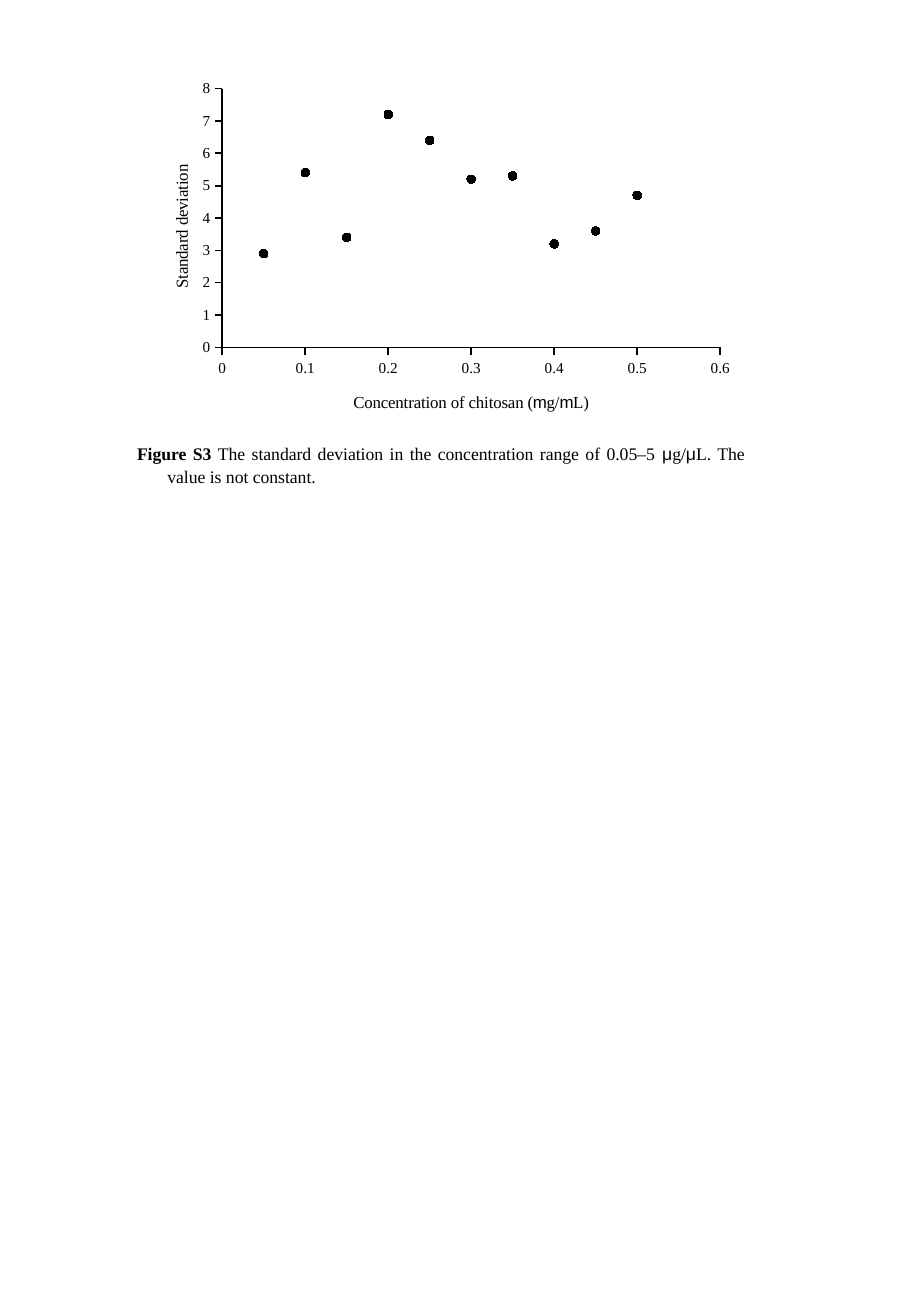
from dataclasses import dataclass

from lxml.etree import SubElement
from pptx import Presentation
from pptx.chart.data import XyChartData
from pptx.dml.color import RGBColor
from pptx.enum.chart import XL_CHART_TYPE as ChartType
from pptx.enum.chart import XL_MARKER_STYLE as MarkerStyle
from pptx.enum.chart import XL_TICK_MARK as TickMark
from pptx.enum.text import MSO_AUTO_SIZE as AutoSize
from pptx.enum.text import PP_ALIGN as Align
from pptx.oxml.ns import qn
from pptx.util import Inches, Pt


@dataclass(frozen=True)
class Theme:
    ink: RGBColor = RGBColor(0, 0, 0)
    serif: str = "Times New Roman"
    sans: str = "Arial"
    tick_size: float = 9
    title_size: float = 10
    caption_size: float = 10.5
    marker_size: int = 5
    axis_width: float = 1


CONCENTRATIONS = [round(0.05 * step, 2) for step in range(1, 11)]
DEVIATIONS = [2.9, 5.4, 3.4, 7.2, 6.4, 5.2, 5.3, 3.2, 3.6, 4.7]


def set_layout(parent, position, **settings):
    """Give a chart part a manual layout in shares of the chart."""
    for old in parent.findall(qn("c:layout")):
        parent.remove(old)
    layout = SubElement(parent, qn("c:layout"))
    manual = SubElement(layout, qn("c:manualLayout"))
    for name, value in settings.items():
        SubElement(manual, qn(f"c:{name}")).set("val", str(value))
    parent.insert(position, layout)


class FigurePage:
    """A page on a grid of 75 columns and rows of a tenth of an inch."""

    cell = Inches(0.1)

    def __init__(self, presentation, theme):
        self.theme = theme
        self.slide = presentation.slides.add_slide(presentation.slide_layouts[6])

    def box(self, *grid):
        return [round(length * self.cell) for length in grid]

    def style_font(self, font, size):
        font.name = self.theme.serif
        font.size = Pt(size)
        font.color.rgb = self.theme.ink
        font.bold = False

    def add_runs(self, paragraph, runs, size):
        """Add (text, font name) pairs to a paragraph."""
        self.style_font(paragraph.font, size)
        for text, name in runs:
            run = paragraph.add_run()
            run.text = text
            self.style_font(run.font, size)
            run.font.name = name

    def axis(self, axis, maximum, step, runs, corner, rotation=0):
        axis.minimum_scale, axis.maximum_scale = 0, maximum
        axis.major_unit = step
        axis.has_major_gridlines = False
        axis.major_tick_mark = TickMark.OUTSIDE
        axis.minor_tick_mark = TickMark.NONE
        axis.tick_labels.number_format = "General"
        axis.tick_labels.number_format_is_linked = False
        self.style_font(axis.tick_labels.font, self.theme.tick_size)
        axis.format.line.color.rgb = self.theme.ink
        axis.format.line.width = Pt(self.theme.axis_width)

        frame = axis.axis_title.text_frame
        self.add_runs(frame.paragraphs[0], runs, self.theme.title_size)
        title = axis.axis_title.element
        title.find(".//" + qn("a:bodyPr")).set("rot", str(rotation * 60000))
        left, top = corner
        set_layout(title, 1, xMode="edge", yMode="edge", x=left, y=top)

    def scatter(self, grid, x_values, y_values):
        theme = self.theme
        data = XyChartData()
        points = data.add_series("Series 1")
        for x, y in zip(x_values, y_values):
            points.add_data_point(x, y)
        frame = self.slide.shapes.add_chart(
            ChartType.XY_SCATTER, *self.box(*grid), data)
        chart = frame.chart
        chart.has_legend = chart.has_title = False
        self.style_font(chart.font, theme.title_size)
        chart.plots[0].vary_by_categories = False

        series = chart.plots[0].series[0]
        series.smooth = False
        series.format.line.fill.background()
        marker = series.marker
        marker.style, marker.size = MarkerStyle.CIRCLE, theme.marker_size
        marker.format.fill.solid()
        marker.format.fill.fore_color.rgb = theme.ink
        marker.format.line.color.rgb = theme.ink

        set_layout(chart.element.find(".//" + qn("c:plotArea")), 0,
                   layoutTarget="inner", xMode="edge", yMode="edge",
                   x=0.14, y=0.05, w=0.82, h=0.71)
        return chart

    def caption(self, grid, label, runs):
        """Add a justified caption with a bold label and a hanging indent."""
        box = self.slide.shapes.add_textbox(*self.box(*grid))
        frame = box.text_frame
        frame.word_wrap = True
        frame.auto_size = AutoSize.SHAPE_TO_FIT_TEXT
        paragraph = frame.paragraphs[0]
        paragraph.alignment = Align.JUSTIFY
        paragraph.line_spacing = 1.08
        self.add_runs(paragraph, [(label, self.theme.serif), *runs],
                      self.theme.caption_size)
        paragraph.runs[0].font.bold = True
        properties = paragraph._p.get_or_add_pPr()
        properties.set("marL", str(Inches(0.25)))
        properties.set("indent", str(-Inches(0.25)))


def main():
    presentation = Presentation()
    presentation.slide_width = Inches(7.5)
    presentation.slide_height = Inches(10.83)
    theme = Theme()
    serif, sans = theme.serif, theme.sans
    page = FigurePage(presentation, theme)

    chart = page.scatter((11.3, 5.8, 50, 30), CONCENTRATIONS, DEVIATIONS)
    page.axis(chart.category_axis, 0.6, 0.1,
              [("Concentration of chitosan (", serif), ("m", sans),
               ("g/", serif), ("m", sans), ("L)", serif)],
              corner=(0.35, 0.87))
    page.axis(chart.value_axis, 8, 1, [("Standard deviation", serif)],
              corner=(0.05, 0.25), rotation=-90)

    page.caption((10.3, 35.8, 52, 4.7), "Figure S3", [
        (" The standard deviation in the concentration range of 0.05–5 ", serif),
        ("μ", sans), ("g/", serif), ("μ", sans),
        ("L. The value is not constant.", serif)])
    presentation.save("out.pptx")


if __name__ == "__main__":
    main()
